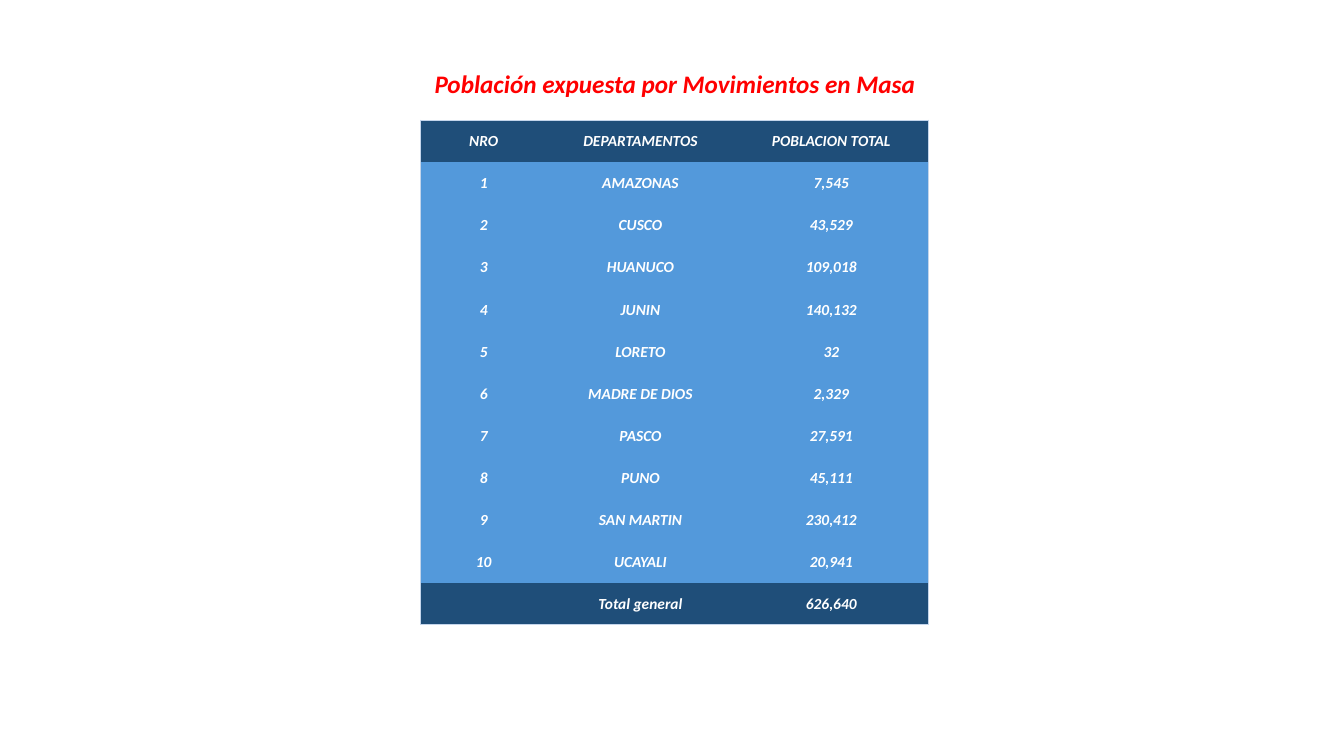
from dataclasses import dataclass

from lxml import etree
from pptx import Presentation
from pptx.dml.color import RGBColor
from pptx.enum.text import MSO_ANCHOR, MSO_AUTO_SIZE, PP_ALIGN
from pptx.oxml.ns import qn
from pptx.util import Cm, Pt

CENTER = PP_ALIGN.CENTER
MIDDLE = MSO_ANCHOR.MIDDLE
FIT_TEXT = MSO_AUTO_SIZE.SHAPE_TO_FIT_TEXT


@dataclass(frozen=True)
class Theme:
    font: str = "Calibri"
    title_size: int = 18
    table_size: int = 11
    title: str = "FF0000"
    table_text: str = "FFFFFF"
    dark_row: str = "1F4E79"
    body_row: str = "5399DB"
    border: str = "C4D5EB"
    border_width: float = 0.5


THEME = Theme()
TITLE = "Población expuesta por Movimientos en Masa"
HEADER = ("NRO", "DEPARTAMENTOS", "POBLACION TOTAL")
POPULATION = {
    "AMAZONAS": 7545,
    "CUSCO": 43529,
    "HUANUCO": 109018,
    "JUNIN": 140132,
    "LORETO": 32,
    "MADRE DE DIOS": 2329,
    "PASCO": 27591,
    "PUNO": 45111,
    "SAN MARTIN": 230412,
    "UCAYALI": 20941,
}
COLUMN_WIDTHS = (3.18, 4.72, 4.9)
ROW_HEIGHT = 1.06


def write_text(frame, text, size, color):
    paragraph = frame.paragraphs[0]
    paragraph.text = text
    paragraph.alignment = CENTER
    font = paragraph.font
    font.name = THEME.font
    font.size = Pt(size)
    font.bold = font.italic = True
    font.color.rgb = RGBColor.from_string(color)


def add_title(slide):
    title = slide.shapes.add_textbox(Cm(10.62), Cm(1.6), Cm(12.78), Cm(1.02))
    frame = title.text_frame
    frame.word_wrap = False
    frame.auto_size = FIT_TEXT
    write_text(frame, TITLE, THEME.title_size, THEME.title)


def set_borders(cell, outer_sides):
    properties = cell._tc.get_or_add_tcPr()
    for side in ("L", "R", "T", "B"):
        line = etree.SubElement(properties, qn(f"a:ln{side}"))
        if side in outer_sides:
            line.set("w", str(Pt(THEME.border_width)))
            fill = etree.SubElement(line, qn("a:solidFill"))
            etree.SubElement(fill, qn("a:srgbClr"), val=THEME.border)
        else:
            etree.SubElement(line, qn("a:noFill"))


def style_cell(cell, text, fill_color, outer_sides):
    cell.margin_left = cell.margin_right = cell.margin_top = Cm(0.03)
    cell.margin_bottom = 0
    cell.vertical_anchor = MIDDLE
    set_borders(cell, outer_sides)
    cell.fill.solid()
    cell.fill.fore_color.rgb = RGBColor.from_string(fill_color)
    write_text(cell.text_frame, text, THEME.table_size, THEME.table_text)


def population_rows():
    departments = [
        (str(number), name, f"{people:,}")
        for number, (name, people) in enumerate(POPULATION.items(), 1)
    ]
    total = ("", "Total general", f"{sum(POPULATION.values()):,}")
    return [HEADER, *departments, total]


def add_population_table(slide):
    rows = population_rows()
    last_row, last_column = len(rows) - 1, len(HEADER) - 1
    table = slide.shapes.add_table(
        len(rows), len(HEADER), Cm(10.6), Cm(3.02),
        Cm(sum(COLUMN_WIDTHS)), Cm(ROW_HEIGHT * len(rows)),
    ).table
    table.horz_banding = False
    table.last_row = True
    for column, width in zip(table.columns, COLUMN_WIDTHS):
        column.width = Cm(width)
    for r, values in enumerate(rows):
        table.rows[r].height = Cm(ROW_HEIGHT)
        fill_color = THEME.dark_row if r in (0, last_row) else THEME.body_row
        for c, text in enumerate(values):
            edges = {"L": c == 0, "R": c == last_column,
                     "T": r == 0, "B": r == last_row}
            outer_sides = [side for side, is_outer in edges.items() if is_outer]
            style_cell(table.cell(r, c), text, fill_color, outer_sides)


def main():
    presentation = Presentation()
    presentation.slide_width = Cm(33.87)
    presentation.slide_height = Cm(19.05)
    slide = presentation.slides.add_slide(presentation.slide_layouts[6])
    add_title(slide)
    add_population_table(slide)
    presentation.save("out.pptx")


if __name__ == "__main__":
    main()
